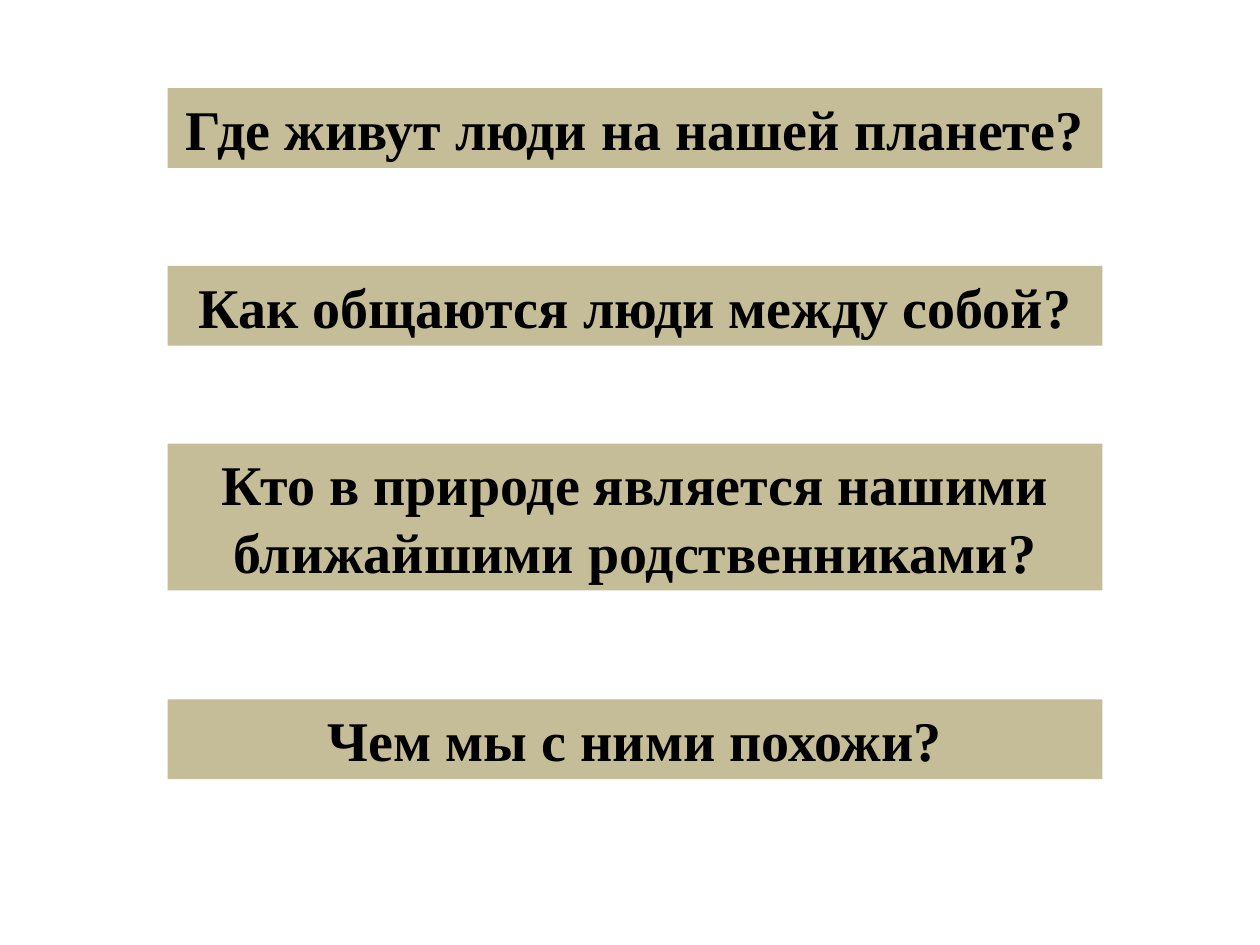
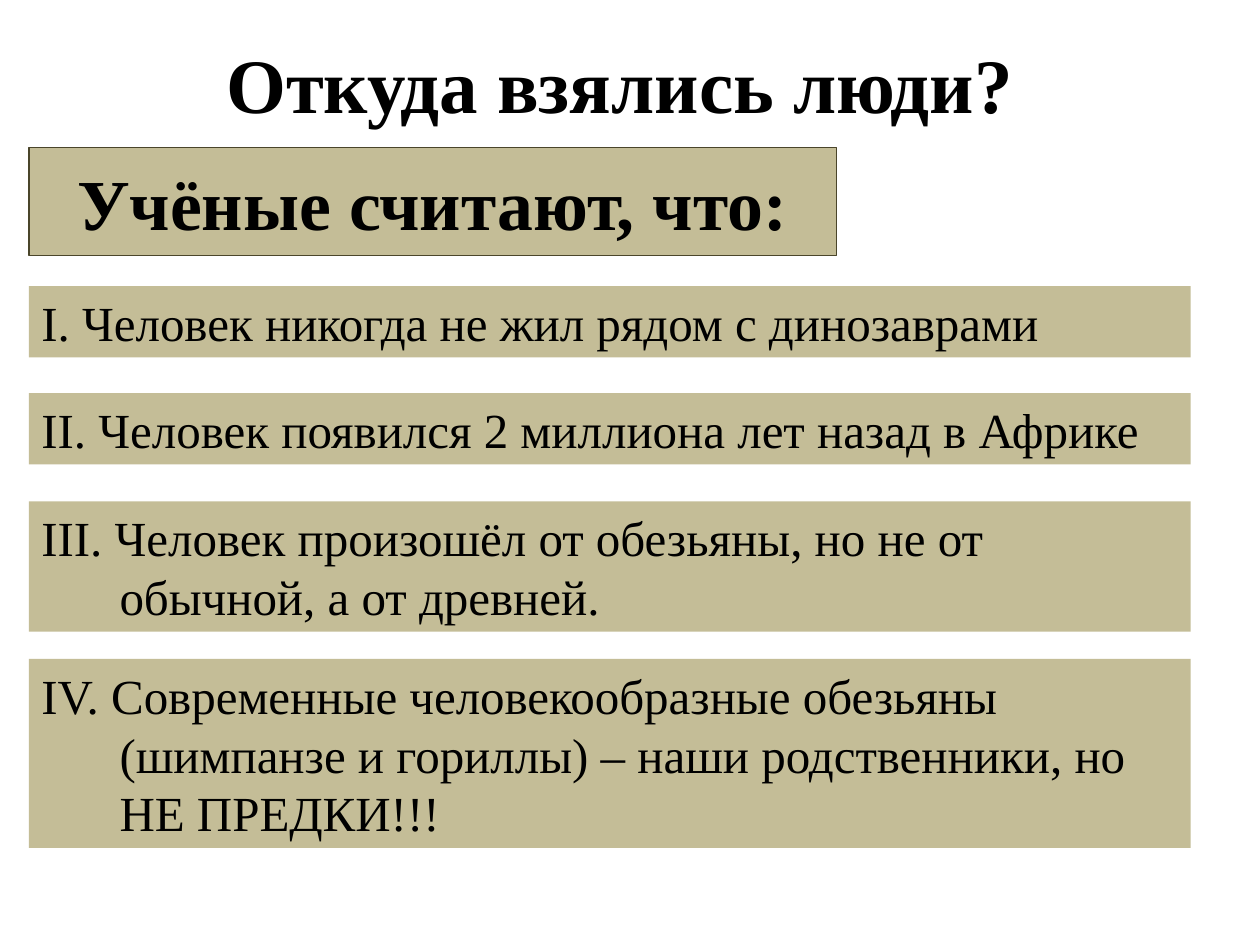
"""Build two slides about the origin of people."""
from pptx import Presentation
from pptx.dml.color import RGBColor
from pptx.enum.shapes import MSO_SHAPE
from pptx.enum.text import MSO_ANCHOR, MSO_AUTO_SIZE, PP_ALIGN
from pptx.oxml.xmlchemy import OxmlElement
from pptx.util import Inches, Pt

ASKS = [
    (0.7, 1, "Где живут люди на нашей планете?"),
    (2.11, 1, "Как общаются люди между собой?"),
    (3.52, 2, "Кто в природе является нашими ближайшими родственниками?"),
    (5.55, 1, "Чем мы с ними похожи?"),
]
TITLE = "Откуда взялись люди?"
LEAD = "Учёные считают, что:"
FACTS = [
    (2.27, 1, "I. Человек никогда не жил рядом с динозаврами"),
    (3.12, 1, "II. Человек появился 2 миллиона лет назад в Африке"),
    (3.98, 2, "III. Человек произошёл от обезьяны, но не от обычной, а от древней."),
    (5.23, 3, "IV. Современные человекообразные обезьяны (шимпанзе и гориллы) – "
              "наши родственники, но НЕ ПРЕДКИ!!!"),
]


class Theme:
    """Hold the shared colours, font and type sizes."""
    sand = RGBColor.from_string("C4BD97")
    edge = RGBColor.from_string("4A452A")
    ink = RGBColor.from_string("000000")
    face = "Times New Roman"
    title, lead, ask, fact = 44, 41, 32, 28
    pad, leading = 0.1, 1.2


def apply(item, values):
    """Set each named value on an item."""
    for name, value in values.items():
        setattr(item, name, value)


def place(shape, left, top, width, height):
    """Move a shape to a place given in inches."""
    spots = zip(("left", "top", "width", "height"), (left, top, width, height))
    apply(shape, {name: Inches(value) for name, value in spots})


def paint(shape, edge=None):
    """Fill a band and draw its edge, if any."""
    shape.fill.solid()
    shape.fill.fore_color.rgb = Theme.sand
    if edge is None:
        shape.line.fill.background()
    else:
        shape.line.color.rgb = edge
        shape.line.width = Pt(0.75)


def write(shape, text, size, bold=True, align=PP_ALIGN.CENTER, hang=0):
    """Write one paragraph with an optional hanging indent."""
    frame = shape.text_frame
    apply(frame, {"text": text, "word_wrap": True, "auto_size": MSO_AUTO_SIZE.NONE,
                  "vertical_anchor": MSO_ANCHOR.MIDDLE})
    para = frame.paragraphs[0]
    props = para._p.get_or_add_pPr()
    props.set("marL", str(Inches(hang)))
    props.set("indent", str(-Inches(hang)))
    props.append(OxmlElement("a:buNone"))
    apply(para, {"alignment": align, "space_before": Pt(0)})
    apply(para.font, {"name": Theme.face, "size": Pt(size), "bold": bold})
    para.font.color.rgb = Theme.ink


def stack(slide, rows, left, width, size, **style):
    """Add bands whose heights follow from their line counts."""
    for top, lines, text in rows:
        band = slide.shapes.add_shape(MSO_SHAPE.RECTANGLE, 0, 0, 0, 0)
        band.shadow.inherit = False
        place(band, left, top, width, Theme.pad + lines * size * Theme.leading / 72)
        paint(band)
        write(band, text, size, **style)


def main():
    """Build and save the deck."""
    deck = Presentation()
    apply(deck, {"slide_width": Inches(10), "slide_height": Inches(7.5)})

    asks = deck.slides.add_slide(deck.slide_layouts[6])
    stack(asks, ASKS, 1.33, 7.42, Theme.ask)

    facts = deck.slides.add_slide(deck.slide_layouts[1])
    title, lead = facts.placeholders
    place(title, 1.56, 0.23, 6.72, 0.86)
    write(title, TITLE, Theme.title)
    place(lead, 0.23, 1.17, 6.41, 0.86)
    paint(lead, Theme.edge)
    write(lead, LEAD, Theme.lead)
    stack(facts, FACTS, 0.23, 9.22, Theme.fact,
          bold=False, align=PP_ALIGN.LEFT, hang=0.62)

    deck.save("out.pptx")


if __name__ == "__main__":
    main()
